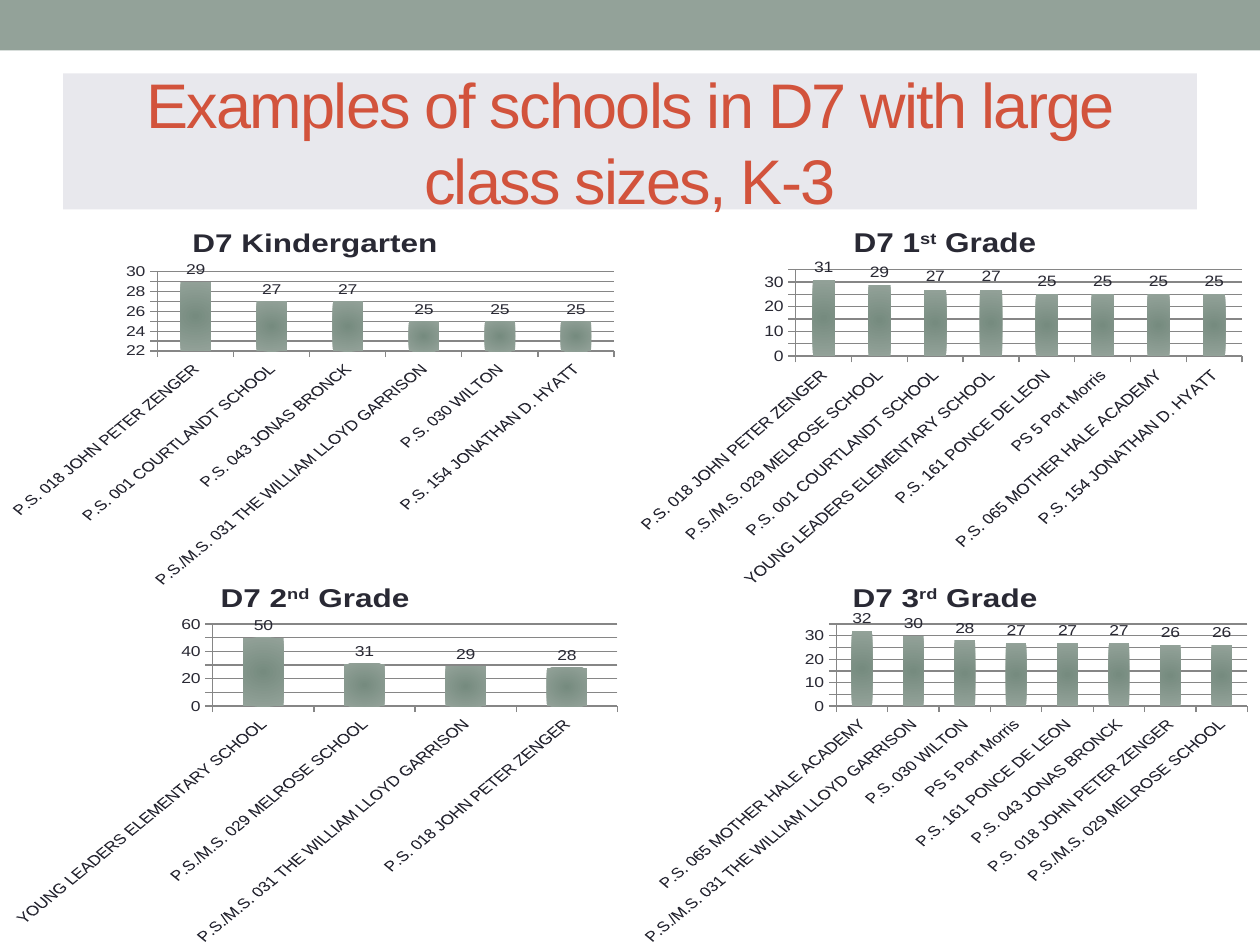
from dataclasses import dataclass

from lxml.etree import SubElement
from pptx import Presentation
from pptx.chart.data import CategoryChartData
from pptx.dml.color import RGBColor as Color
from pptx.enum.chart import XL_CHART_TYPE as ChartType
from pptx.enum.chart import XL_LABEL_POSITION as LabelPosition
from pptx.enum.chart import XL_TICK_MARK as TickMark
from pptx.enum.shapes import MSO_SHAPE as ShapeType
from pptx.enum.text import MSO_ANCHOR as Anchor
from pptx.enum.text import MSO_AUTO_SIZE as AutoSize
from pptx.enum.text import PP_ALIGN as Align
from pptx.oxml.ns import qn
from pptx.util import Cm, Pt


@dataclass(frozen=True)
class Theme:
    font: str = "Arial"
    sage: Color = Color(0x93, 0xA2, 0x99)
    dark_sage: Color = Color(0x76, 0x8B, 0x7F)
    panel: Color = Color(0xE8, 0xE8, 0xED)
    accent: Color = Color(0xD2, 0x53, 0x3C)
    ink: Color = Color(0x29, 0x29, 0x34)
    grid: Color = Color(0x86, 0x86, 0x86)
    title_size: Pt = Pt(36)
    chart_title_size: Pt = Pt(18)
    label_size: Pt = Pt(10)


@dataclass(frozen=True)
class GradeChart:
    grade: tuple[str, str, str]  # before, superscript, after
    scale: tuple[int, int, int]  # minimum, maximum, step
    class_sizes: dict[str, int]


THEME = Theme()
CHART_WIDTH, CHART_HEIGHT = Cm(12.7), Cm(7.62)
ROW_TOPS = (Cm(4.23), Cm(11.43))

ZENGER = "P.S. 018 JOHN PETER ZENGER"
COURTLANDT = "P.S. 001 COURTLANDT SCHOOL"
BRONCK = "P.S. 043 JONAS BRONCK"
GARRISON = "P.S./M.S. 031 THE WILLIAM LLOYD GARRISON"
WILTON = "P.S. 030 WILTON"
HYATT = "P.S. 154 JONATHAN D. HYATT"
MELROSE = "P.S./M.S. 029 MELROSE SCHOOL"
YOUNG_LEADERS = "YOUNG LEADERS ELEMENTARY SCHOOL"
PONCE = "P.S. 161 PONCE DE LEON"
MORRIS = "PS 5 Port Morris"
HALE = "P.S. 065 MOTHER HALE ACADEMY"

CHARTS = (
    GradeChart(("D7 Kindergarten", "", ""), (22, 30, 1), {
        ZENGER: 29, COURTLANDT: 27, BRONCK: 27, GARRISON: 25, WILTON: 25, HYATT: 25}),
    GradeChart(("D7 1", "st", " Grade"), (0, 35, 5), {
        ZENGER: 31, MELROSE: 29, COURTLANDT: 27, YOUNG_LEADERS: 27,
        PONCE: 25, MORRIS: 25, HALE: 25, HYATT: 25}),
    GradeChart(("D7 2", "nd", " Grade"), (0, 60, 10), {
        YOUNG_LEADERS: 50, MELROSE: 31, GARRISON: 29, ZENGER: 28}),
    GradeChart(("D7 3", "rd", " Grade"), (0, 35, 5), {
        HALE: 32, GARRISON: 30, WILTON: 28, MORRIS: 27,
        PONCE: 27, BRONCK: 27, ZENGER: 26, MELROSE: 26}),
)


def set_attributes(target, values: dict) -> None:
    for name, value in values.items():
        setattr(target, name, value)


def format_font(font, size: Pt, color: Color, bold: bool = False) -> None:
    set_attributes(font, {"name": THEME.font, "size": size, "bold": bold})
    font.color.rgb = color


def paint(shape, color: Color) -> None:
    shape.fill.solid()
    shape.fill.fore_color.rgb = color
    shape.line.fill.background()


def add_band(slide) -> None:
    band = slide.shapes.add_shape(ShapeType.RECTANGLE, 0, 0, Cm(25.4), Cm(1.02))
    band.shadow.inherit = False
    paint(band, THEME.sage)


def write_title(slide, text: str) -> None:
    title = slide.shapes.title
    set_attributes(title, {"left": Cm(1.27), "top": Cm(1.48),
                           "width": Cm(22.86), "height": Cm(2.74)})
    paint(title, THEME.panel)
    frame = title.text_frame
    set_attributes(frame, {"text": text, "word_wrap": True, "auto_size": AutoSize.NONE,
                           "vertical_anchor": Anchor.MIDDLE})
    paragraph = frame.paragraphs[0]
    paragraph.alignment = Align.CENTER
    run = paragraph.runs[0]
    format_font(run.font, THEME.title_size, THEME.accent)
    run.font._element.set("spc", "-100")


def write_chart_title(chart, parts: tuple[str, str, str]) -> None:
    paragraph = chart.chart_title.text_frame.paragraphs[0]
    for index, text in enumerate(parts):
        if text:
            run = paragraph.add_run()
            run.text = text
            format_font(run.font, THEME.chart_title_size, THEME.ink, bold=True)
            if index == 1:
                run.font._element.set("baseline", "30000")
    chart.chart_title.include_in_layout = False


def fill_radial(fill) -> None:
    """Shade from a dark centre to a lighter edge."""
    fill.gradient()
    for stop, color in zip(fill.gradient_stops, (THEME.dark_sage, THEME.sage)):
        stop.color.rgb = color
    gradient = fill._xPr.find(qn("a:gradFill"))
    gradient.remove(gradient.find(qn("a:lin")))
    shade = SubElement(gradient, qn("a:path"), {"path": "circle"})
    SubElement(shade, qn("a:fillToRect"), dict.fromkeys("ltrb", "50000"))


def format_axes(chart, scale: tuple[int, int, int]) -> None:
    minimum, maximum, step = scale
    category_axis, value_axis = chart.category_axis, chart.value_axis
    set_attributes(value_axis, {"minimum_scale": minimum, "maximum_scale": maximum,
                                "major_unit": step, "has_major_gridlines": True})
    set_attributes(value_axis.tick_labels, {"number_format": "0",
                                            "number_format_is_linked": False})
    value_axis.major_gridlines.format.line.color.rgb = THEME.grid
    for axis in (category_axis, value_axis):
        set_attributes(axis, {"major_tick_mark": TickMark.OUTSIDE,
                              "minor_tick_mark": TickMark.NONE})
        axis.format.line.color.rgb = THEME.grid
        format_font(axis.tick_labels.font, THEME.label_size, THEME.ink)


def add_grade_chart(slide, grade_chart: GradeChart, left: Cm, top: Cm) -> None:
    data = CategoryChartData(number_format="0")
    data.categories = list(grade_chart.class_sizes)
    data.add_series("Series 1", list(grade_chart.class_sizes.values()))
    chart = slide.shapes.add_chart(ChartType.COLUMN_CLUSTERED, left, top,
                                   CHART_WIDTH, CHART_HEIGHT, data).chart
    set_attributes(chart, {"has_legend": False, "has_title": True})
    format_font(chart.font, THEME.label_size, THEME.ink)
    write_chart_title(chart, grade_chart.grade)
    format_axes(chart, grade_chart.scale)
    plot = chart.plots[0]
    set_attributes(plot, {"gap_width": 150, "vary_by_categories": False,
                          "has_data_labels": True})
    set_attributes(plot.data_labels, {"show_value": True, "number_format": "0",
                                      "number_format_is_linked": False,
                                      "position": LabelPosition.OUTSIDE_END})
    format_font(plot.data_labels.font, THEME.label_size, THEME.ink)
    fill_radial(plot.series[0].format.fill)


def main() -> None:
    presentation = Presentation()
    set_attributes(presentation, {"slide_width": Cm(25.4), "slide_height": Cm(19.05)})
    slide = presentation.slides.add_slide(presentation.slide_layouts[5])
    add_band(slide)
    write_title(slide, "Examples of schools in D7 with large class sizes, K-3")
    for index, grade_chart in enumerate(CHARTS):
        row, column = divmod(index, 2)
        add_grade_chart(slide, grade_chart, column * CHART_WIDTH, ROW_TOPS[row])
    presentation.save("out.pptx")


if __name__ == "__main__":
    main()
